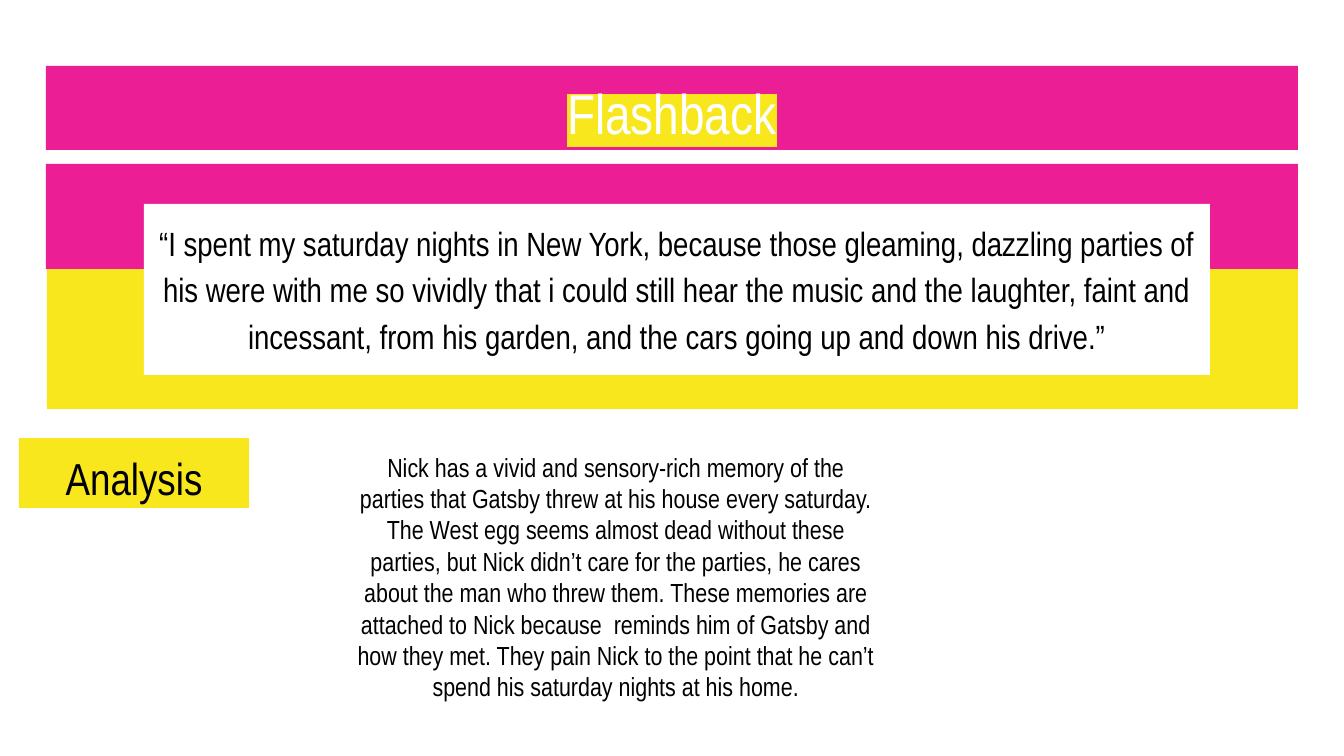
"""Build the Flashback slide: colour bands, a quotation and its analysis."""
from dataclasses import dataclass
from typing import Optional

from lxml import etree
from pptx import Presentation
from pptx import util as u
from pptx.dml.color import RGBColor
from pptx.enum import shapes, text
from pptx.oxml import ns

SCALE = 914400 / 134.4


def px(length: int) -> u.Emu:
    return u.Emu(round(length * SCALE))


@dataclass(frozen=True)
class Theme:
    pink: str = "EB1E95"
    yellow: str = "F8E71C"
    white: str = "FFFFFF"
    black: str = "000000"
    font: str = "Arial Narrow"
    title: int = 30
    label: int = 24
    quote: int = 18
    body: int = 14
    inset: int = 13


THEME = Theme()


@dataclass(frozen=True)
class Copy:
    words: str
    size: int
    color: str = THEME.black
    highlight: Optional[str] = None
    indent: int = 0
    line_spacing: Optional[float] = None
    space_after: int = 0


@dataclass(frozen=True)
class Block:
    left: int
    top: int
    width: int
    height: int
    fill: Optional[str] = None
    copy: Optional[Copy] = None


TITLE = Block(46, 66, 1252, 84, THEME.pink,
              Copy("Flashback", THEME.title, THEME.white, THEME.yellow))
BANDS = [
    Block(47, 269, 1251, 140, THEME.yellow),
    Block(46, 164, 1252, 105, THEME.pink),
]
PANELS = [
    Block(144, 204, 1066, 171, THEME.white, Copy(
        "“I spent my saturday nights in New York, because those gleaming, "
        "dazzling parties of his were with me so vividly that i could still "
        "hear the music and the laughter, faint and incessant, from his "
        "garden, and the cars going up and down his drive.”",
        THEME.quote, line_spacing=1.15, space_after=16)),
    Block(19, 438, 230, 70, THEME.yellow, Copy("Analysis", THEME.label)),
    Block(274, 438, 617, 235, copy=Copy(
        "Nick has a vivid and sensory-rich memory of the parties that Gatsby "
        "threw at his house every saturday. The West egg seems almost dead "
        "without these parties, but Nick didn’t care for the parties, he "
        "cares about the man who threw them. These memories are attached to "
        "Nick because  reminds him of Gatsby and how they met. They pain Nick "
        "to the point that he can’t spend his saturday nights at his home.",
        THEME.body, indent=67)),
]


def apply(target, values: dict) -> None:
    for name, value in values.items():
        setattr(target, name, value)


def highlight(span, color: str) -> None:
    mark = etree.Element(ns.qn("a:highlight"))
    etree.SubElement(mark, ns.qn("a:srgbClr"), val=color)
    span.font._element.find(ns.qn("a:solidFill")).addnext(mark)


def write(box, copy: Copy) -> None:
    frame = box.text_frame
    sides = ("left", "top", "right", "bottom")
    apply(frame, {f"margin_{side}": px(THEME.inset) for side in sides})
    apply(frame, {"word_wrap": True, "auto_size": text.MSO_AUTO_SIZE.NONE,
                  "vertical_anchor": text.MSO_ANCHOR.TOP})
    para = frame.paragraphs[0]
    apply(para, {"alignment": text.PP_ALIGN.CENTER,
                 "line_spacing": copy.line_spacing,
                 "space_after": u.Pt(copy.space_after)})
    if copy.indent:
        para._p.get_or_add_pPr().set("marL", str(px(copy.indent)))
    span = para.add_run()
    span.text = copy.words
    apply(span.font, {"name": THEME.font, "size": u.Pt(copy.size)})
    span.font.color.rgb = RGBColor.from_string(copy.color)
    if copy.highlight:
        highlight(span, copy.highlight)


def dress(box, block: Block) -> None:
    apply(box, {side: px(getattr(block, side))
                for side in ("left", "top", "width", "height")})
    if block.fill:
        box.fill.solid()
        box.fill.fore_color.rgb = RGBColor.from_string(block.fill)
        box.line.fill.background()
    if block.copy:
        write(box, block.copy)


def draw(page, block: Block) -> None:
    place = [px(value) for value in
             (block.left, block.top, block.width, block.height)]
    if block.fill:
        box = page.shapes.add_shape(shapes.MSO_SHAPE.RECTANGLE, *place)
        box.shadow.inherit = False
    else:
        box = page.shapes.add_textbox(*place)
    dress(box, block)


def main() -> None:
    deck = Presentation()
    apply(deck, {"slide_width": px(1344), "slide_height": px(756)})
    page = deck.slides.add_slide(deck.slide_layouts.get_by_name("Title Only"))
    for band in BANDS:
        draw(page, band)
    title = page.shapes.title
    dress(title, TITLE)
    page.shapes.element.append(title.element)
    for panel in PANELS:
        draw(page, panel)
    deck.save("out.pptx")


if __name__ == "__main__":
    main()
